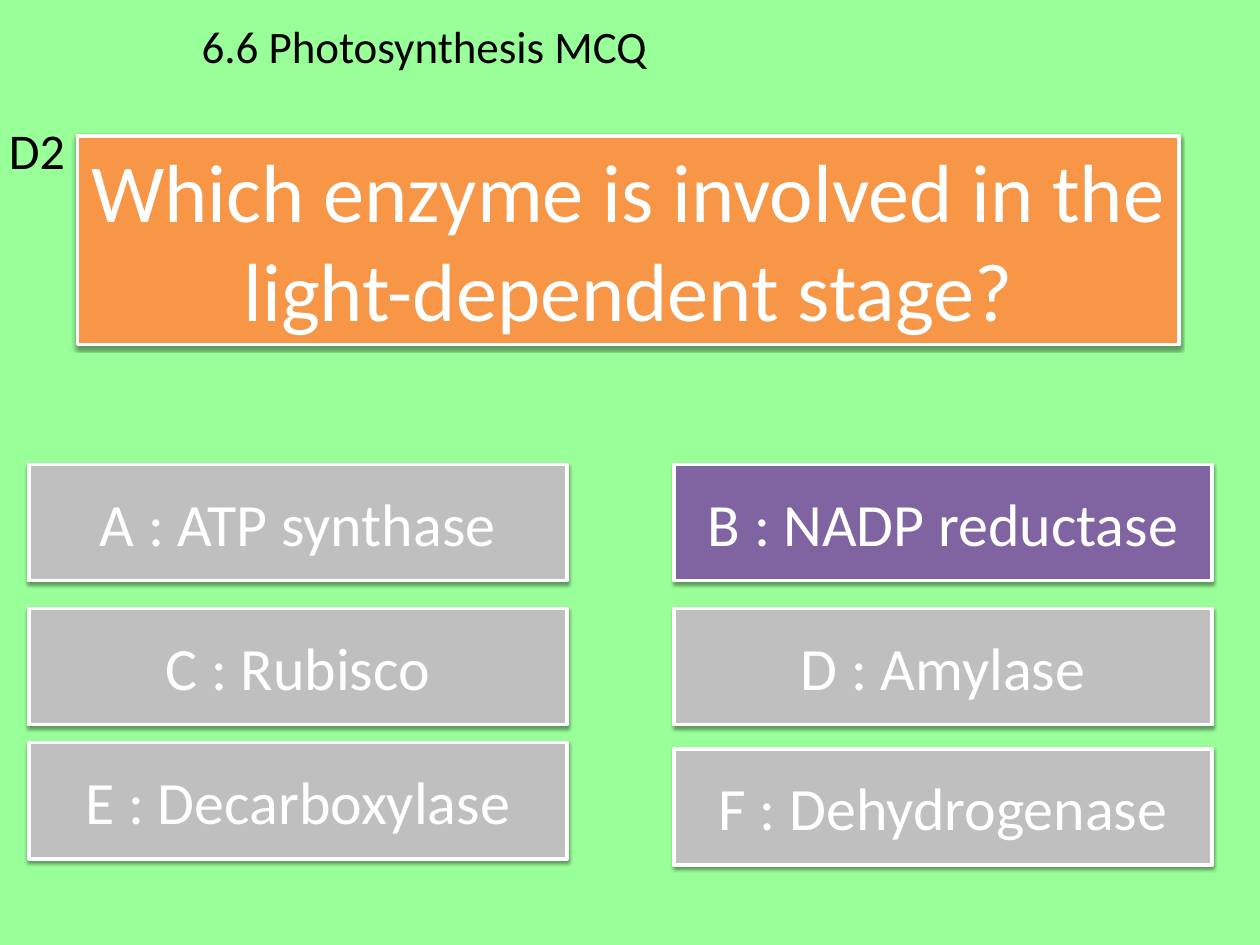
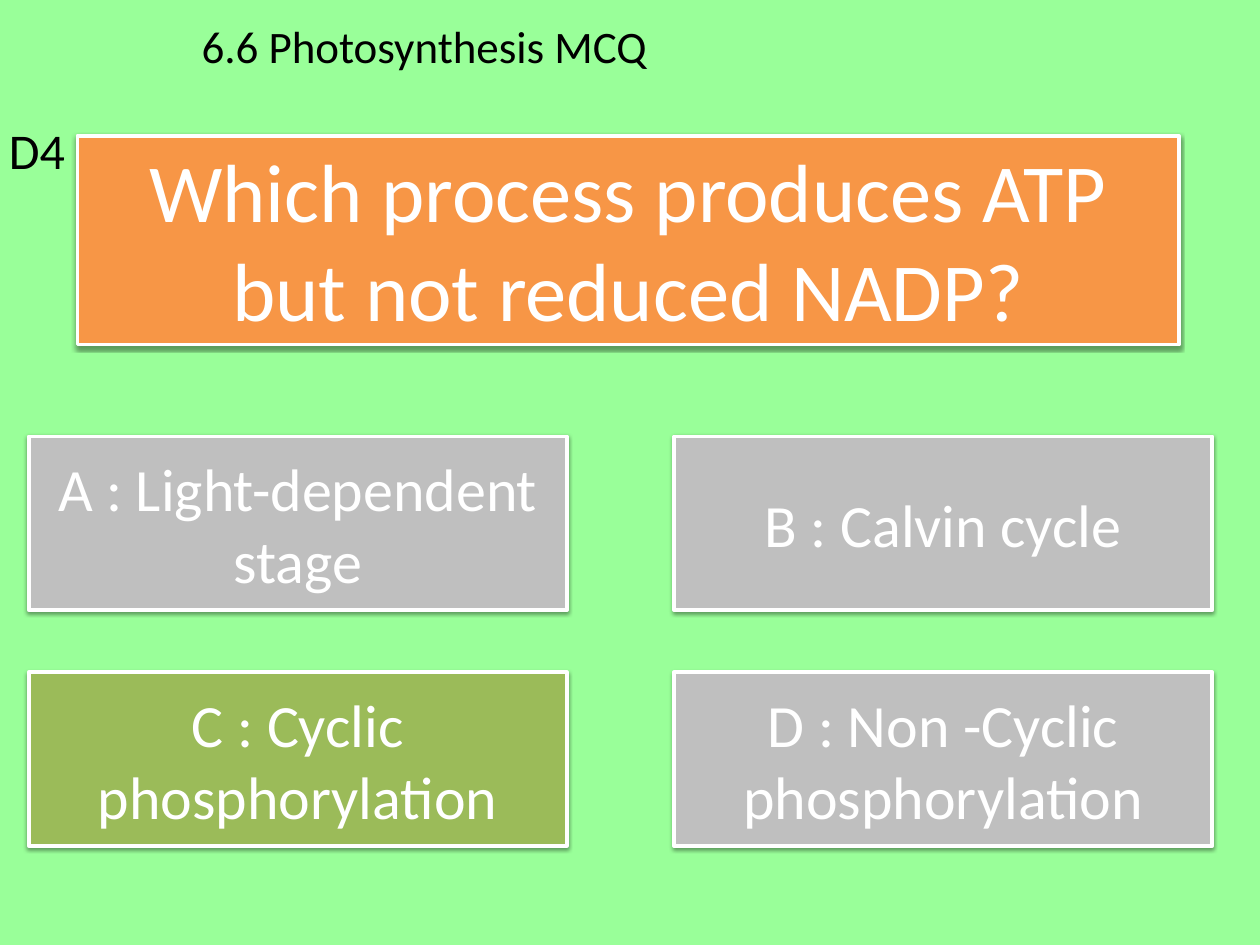
from dataclasses import dataclass

import lxml.etree
import pptx
import pptx.dml.color
import pptx.enum.shapes
import pptx.enum.text
import pptx.oxml.ns
import pptx.presentation
import pptx.shapes.autoshape
import pptx.slide
import pptx.util

Pt = pptx.util.Pt
Anchor = pptx.enum.text.MSO_ANCHOR
Align = pptx.enum.text.PP_ALIGN
AutoSize = pptx.enum.text.MSO_AUTO_SIZE

# Shared style
FONT = "Calibri"
HEADING = "6.6 Photosynthesis MCQ"
COLORS = {
    "background": "99FF99",
    "question": "F79646",
    "answer": "BFBFBF",
    "purple": "8064A2",
    "green": "9BBB59",
    "light": "FFFFFF",
    "dark": "000000",
}
COLUMN_LEFTS = (23, 539.3)
ANSWER_WIDTH = 430.5


@dataclass(frozen=True)
class Box:
    left: float
    top: float
    width: float
    height: float


HEADING_BOX = Box(154, 10.8, 410.4, 51)
LABEL_BOX = Box(0, 92.2, 62, 55.4)
QUESTION_BOX = Box(62, 108.7, 881.3, 167)


@dataclass(frozen=True)
class Answer:
    text: str
    top: float
    color: str = "answer"


@dataclass(frozen=True)
class Question:
    label: str
    text: str
    answer_height: float
    answers: tuple[Answer, ...]  # left and right columns in turn


QUESTIONS = (
    Question("D2", "Which enzyme is involved in the light-dependent stage?", 93, (
        Answer("A : ATP synthase", 371.5),
        Answer("B : NADP reductase", 371.5, "purple"),
        Answer("C : Rubisco", 486.7),
        Answer("D : Amylase", 486.7),
        Answer("E : Decarboxylase", 594),
        Answer("F : Dehydrogenase", 599),
    )),
    Question("D4", "Which process produces ATP but not reduced NADP?", 139, (
        Answer("A : Light-dependent stage", 349.2),
        Answer("B : Calvin cycle", 349.2),
        Answer("C : Cyclic phosphorylation", 537.8, "green"),
        Answer("D : Non -Cyclic phosphorylation", 537.8),
    )),
)


def rgb(name: str) -> pptx.dml.color.RGBColor:
    return pptx.dml.color.RGBColor.from_string(COLORS[name])


def lengths(box: Box) -> tuple[pptx.util.Length, ...]:
    return Pt(box.left), Pt(box.top), Pt(box.width), Pt(box.height)


def write_text(shape: pptx.shapes.autoshape.Shape, text: str, size: float, color: str,
               align: Align = Align.LEFT, anchor: Anchor = Anchor.TOP,
               auto_size: AutoSize = AutoSize.SHAPE_TO_FIT_TEXT) -> None:
    frame = shape.text_frame
    frame.text = text
    frame.word_wrap = True
    frame.auto_size = auto_size
    frame.vertical_anchor = anchor
    paragraph = frame.paragraphs[0]
    paragraph.alignment = align
    paragraph.font.name = FONT
    paragraph.font.size = Pt(size)
    paragraph.font.color.rgb = rgb(color)


def add_shadow(shape: pptx.shapes.autoshape.Shape) -> None:
    qn = pptx.oxml.ns.qn
    shape.shadow.inherit = False
    effects = shape.element.spPr.find(qn("a:effectLst"))
    shadow = lxml.etree.SubElement(
        effects, qn("a:outerShdw"), blurRad=str(Pt(3.1)), dist=str(Pt(1.6)),
        dir="5400000", rotWithShape="0")
    color = lxml.etree.SubElement(shadow, qn("a:srgbClr"), val=COLORS["dark"])
    lxml.etree.SubElement(color, qn("a:alpha"), val="38000")


def add_panel(slide: pptx.slide.Slide, box: Box, fill: str) -> pptx.shapes.autoshape.Shape:
    panel = slide.shapes.add_shape(pptx.enum.shapes.MSO_SHAPE.RECTANGLE, *lengths(box))
    panel.fill.solid()
    panel.fill.fore_color.rgb = rgb(fill)
    panel.line.color.rgb = rgb("light")
    panel.line.width = Pt(3)
    add_shadow(panel)
    return panel


def add_question_slide(presentation: pptx.presentation.Presentation,
                       question: Question) -> None:
    slide = presentation.slides.add_slide(presentation.slide_layouts.get_by_name("Title Only"))
    slide.background.fill.solid()
    slide.background.fill.fore_color.rgb = rgb("background")

    # Heading
    title = slide.shapes.title
    title.left, title.top, title.width, title.height = lengths(HEADING_BOX)
    write_text(title, HEADING, 36, "dark")

    # Question and its label
    panel = add_panel(slide, QUESTION_BOX, "question")
    write_text(panel, question.text, 66, "light", Align.CENTER)
    label = slide.shapes.add_textbox(*lengths(LABEL_BOX))
    write_text(label, question.label, 40, "dark")

    # Answers in two columns
    for index, answer in enumerate(question.answers):
        box = Box(COLUMN_LEFTS[index % 2], answer.top, ANSWER_WIDTH, question.answer_height)
        panel = add_panel(slide, box, answer.color)
        write_text(panel, answer.text, 48, "light", Align.CENTER, Anchor.MIDDLE, AutoSize.NONE)


def main() -> None:
    presentation = pptx.Presentation()
    presentation.slide_width = Pt(1008)
    presentation.slide_height = Pt(756)
    for question in QUESTIONS:
        add_question_slide(presentation, question)
    presentation.save("out.pptx")


if __name__ == "__main__":
    main()
